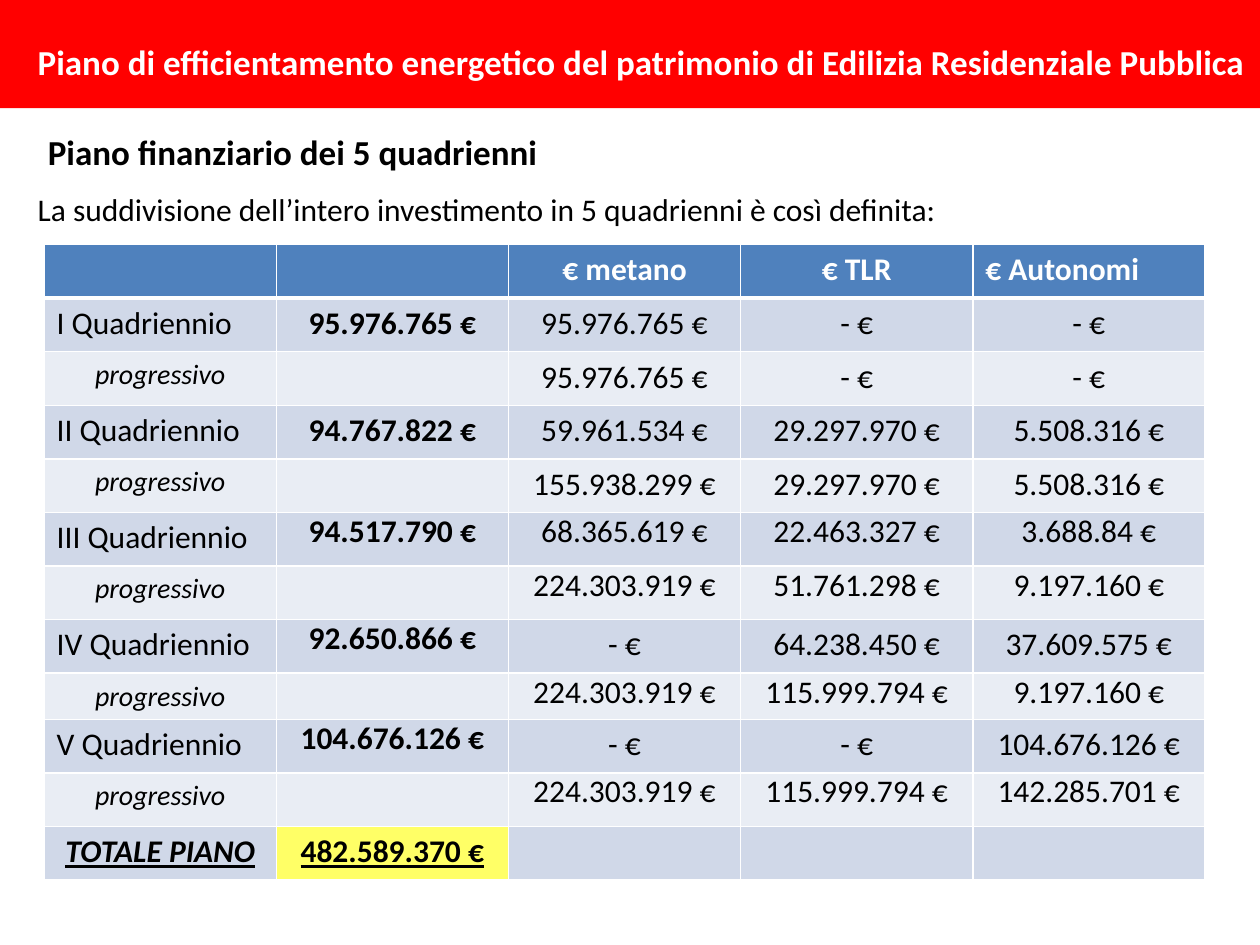
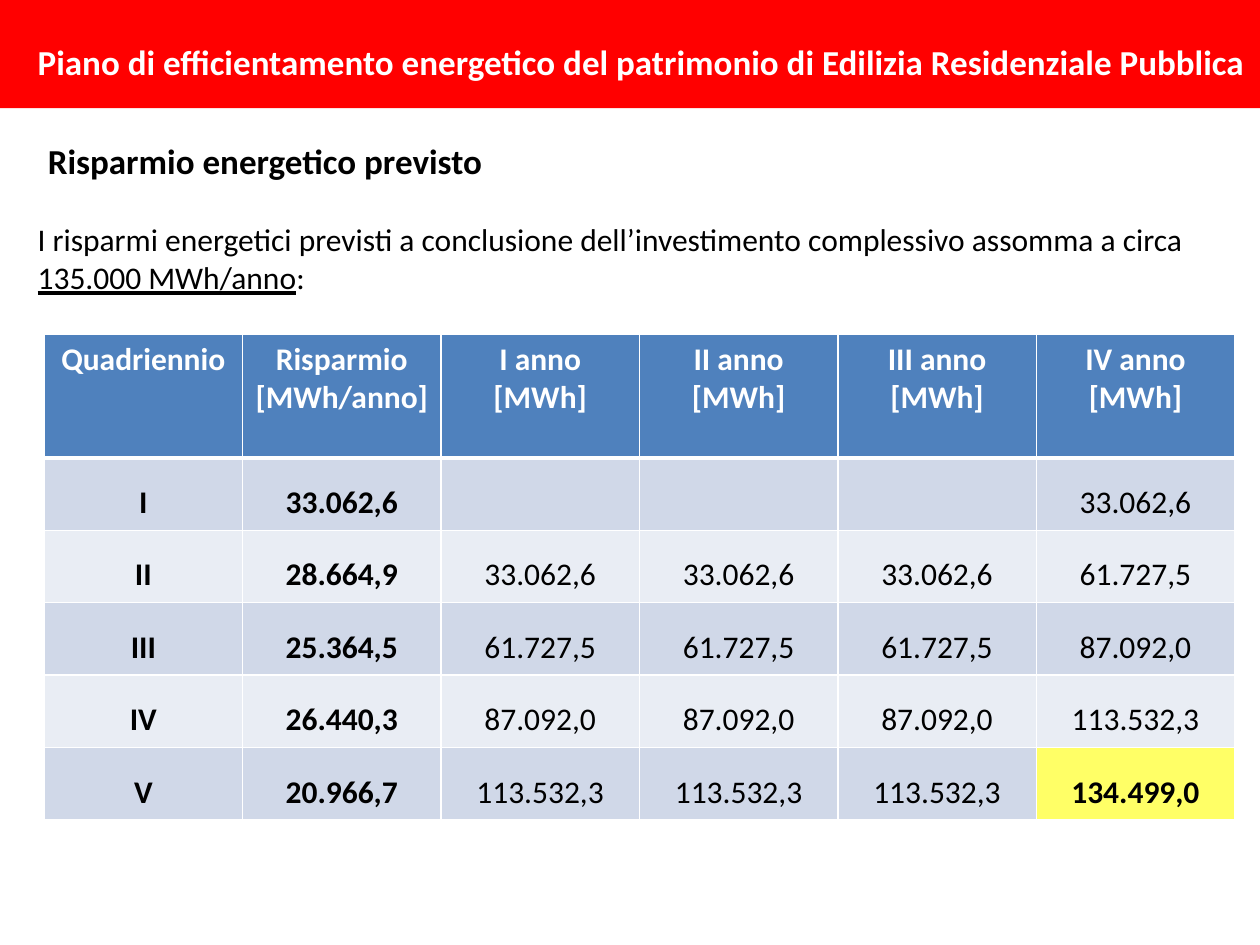
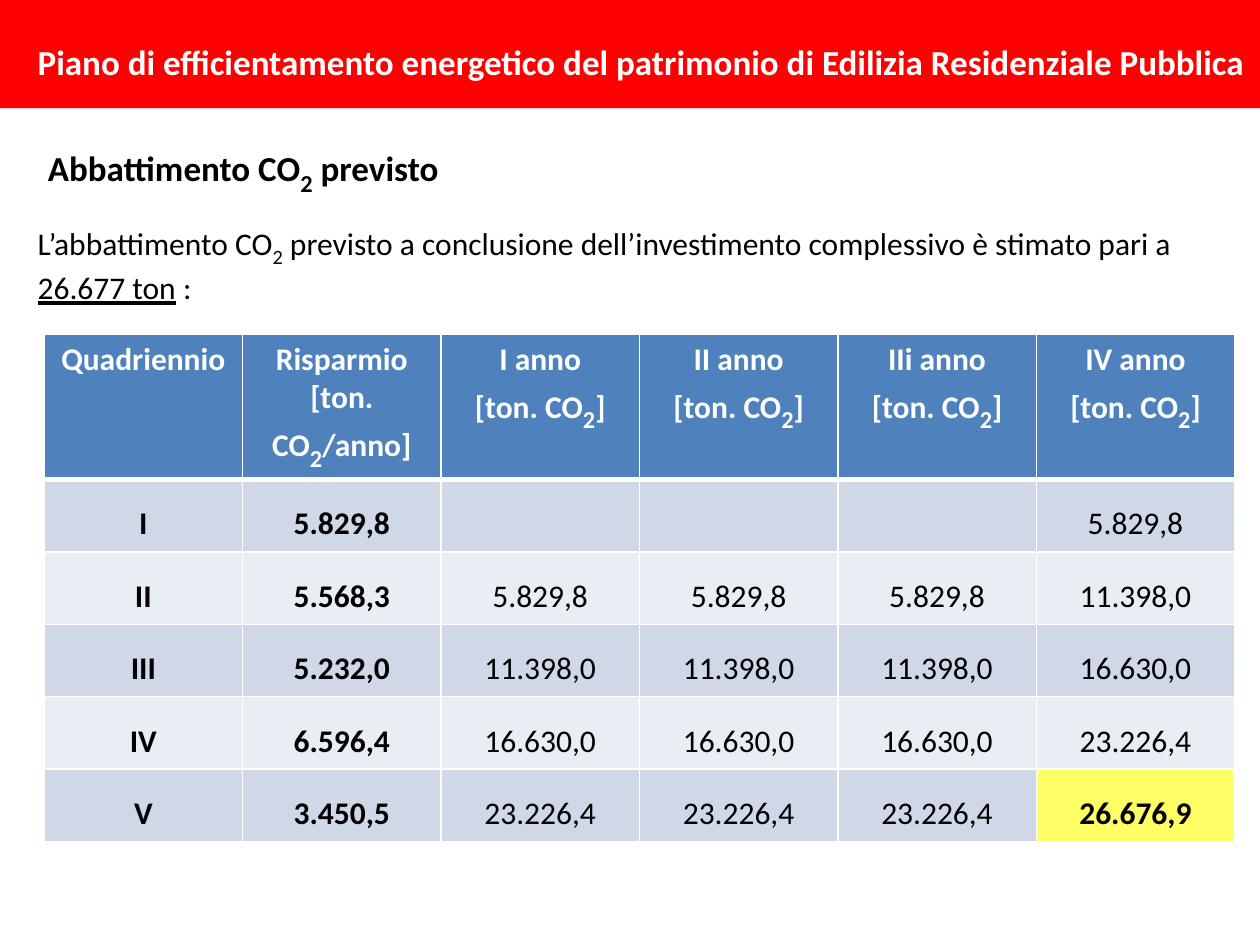
"""Build three slides on the energy plan for public housing."""
from dataclasses import dataclass
from typing import Callable

from lxml.etree import SubElement
from pptx import Presentation
from pptx.dml.color import RGBColor
from pptx.enum.shapes import MSO_SHAPE
from pptx.enum.text import MSO_ANCHOR, MSO_AUTO_SIZE, PP_ALIGN
from pptx.oxml.ns import qn
from pptx.util import Cm, Pt

HUES = {
    "band": "FF0000",
    "head": "4F81BD",
    "odd": "D0D8E8",
    "even": "E9EDF4",
    "mark": "FFFF66",
    "ink": "000000",
    "white": "FFFFFF",
}
FONT = "Calibri"
PLAN = "Piano di efficientamento energetico del patrimonio di Edilizia Residenziale Pubblica"
TERMS = ["I", "II", "III", "IV", "V"]
EDGES = ["L", "R", "T", "B"]


@dataclass
class Page:
    """Wording and table of one slide, with lengths in centimetres."""
    title: str
    title_top: float
    body: str
    body_top: float
    body_tall: float
    grid: list[list[str]]
    left: float
    top: float
    width: float
    tall: list[float]
    mark: tuple[int, int]
    style: Callable[[int, int], dict]


def tint(name: str) -> RGBColor:
    """Return a named colour."""
    return RGBColor.from_string(HUES[name])


def write(frame, text: str, *, size: float = 18, hue: str = "ink", bold: bool = False,
          italic: bool = False, under: bool = False, sub: float = 24,
          align=PP_ALIGN.LEFT, lead: float = 1) -> None:
    """Write one paragraph; | splits runs, ~ opens a subscript, _ an underline."""
    para = frame.paragraphs[0]
    para.alignment = align
    para.line_spacing = lead
    for row, line in enumerate(text.split("\n")):
        if row:
            para.add_line_break()
        for part in line.split("|"):
            low, lined = part.startswith("~"), part.startswith("_")
            run = para.add_run()
            run.text = part.lstrip("~_")
            font = run.font
            font.name, font.size = FONT, Pt(sub if low else size)
            font.bold, font.italic, font.underline = bold, italic, under or lined
            font.color.rgb = tint(hue)
            if low:
                run._r.get_or_add_rPr().set("baseline", "-25000")


def add_band(slide) -> None:
    """Draw the red band with the name of the plan."""
    band = slide.shapes.add_shape(MSO_SHAPE.RECTANGLE, 0, 0, Cm(25.4), Cm(2.18))
    band.shadow.inherit = False
    band.fill.solid()
    band.fill.fore_color.rgb = tint("band")
    band.line.fill.background()
    frame = band.text_frame
    frame.word_wrap = True
    frame.vertical_anchor = MSO_ANCHOR.MIDDLE
    frame.margin_left, frame.margin_right = Cm(0.76), Cm(0.2)
    frame.margin_top, frame.margin_bottom = Cm(0.41), Cm(0.13)
    write(frame, PLAN, size=20, hue="white", bold=True)


def add_title(slide, text: str, top: float) -> None:
    """Place and fill the title."""
    title = slide.shapes.title
    title.left, title.top = Cm(0.71), Cm(top)
    title.width, title.height = Cm(23.6), Cm(1.11)
    frame = title.text_frame
    frame.auto_size = MSO_AUTO_SIZE.NONE
    frame.vertical_anchor = MSO_ANCHOR.TOP
    write(frame, text, size=20, bold=True)


def add_body(slide, text: str, top: float, tall: float) -> None:
    """Add the sentence above the table."""
    box = slide.shapes.add_textbox(Cm(0.51), Cm(top), Cm(24.5), Cm(tall))
    box.text_frame.word_wrap = True
    write(box.text_frame, text, sub=20)


def edge(cell, row: int) -> None:
    """Give a cell white borders, thicker under the head row."""
    props = cell._tc.get_or_add_tcPr()
    for side in EDGES:
        thick = (row, side) in [(0, "B"), (1, "T")]
        line = SubElement(props, qn(f"a:ln{side}"), w=str(Pt(3 if thick else 1)))
        fill = SubElement(line, qn("a:solidFill"))
        SubElement(fill, qn("a:srgbClr"), val=HUES["white"])


def add_grid(slide, page: Page) -> None:
    """Add the table of a page."""
    rows, cols = len(page.grid), len(page.grid[0])
    table = slide.shapes.add_table(rows, cols, Cm(page.left), Cm(page.top),
                                   Cm(page.width), Cm(sum(page.tall))).table
    for col in table.columns:
        col.width = Cm(page.width / cols)
    for row, line in enumerate(page.grid):
        table.rows[row].height = Cm(page.tall[row])
        for col, text in enumerate(line):
            cell = table.cell(row, col)
            edge(cell, row)
            name = "head" if row == 0 else "odd" if row % 2 else "even"
            cell.fill.solid()
            cell.fill.fore_color.rgb = tint("mark" if (row, col) == page.mark else name)
            look = {"align": PP_ALIGN.CENTER} | page.style(row, col)
            if look.pop("flush", False) or not text:
                cell.margin_left = cell.margin_right = 0
                cell.margin_top = cell.margin_bottom = 0
            if text:
                write(cell.text_frame, text, **look)


def cost_style(row: int, col: int) -> dict:
    """Return the format of a cell in the cost table."""
    if row == 0:
        return {"hue": "white", "bold": True,
                "align": PP_ALIGN.LEFT if col == 4 else PP_ALIGN.CENTER}
    if row == 11:
        return {"bold": True, "under": True, "italic": col == 0}
    if col == 0:
        return {"align": PP_ALIGN.LEFT} if row % 2 else {"size": 16, "italic": True}
    flush = row >= 5 and (col == 1 or row not in (7, 9))
    return {"bold": col == 1, "flush": flush}


def gain_style(row: int, col: int) -> dict:
    """Return the format of a cell in a savings table."""
    if row == 0:
        return {"hue": "white", "bold": True}
    return {"bold": col < 2 or (row, col) == (5, 5), "lead": 1.5}


def cost_grid() -> list[list[str]]:
    """Return the rows of the cost table."""
    none = "-"
    costs = [
        ("95.976.765", ["95.976.765", none, none], ["95.976.765", none, none]),
        ("94.767.822", ["59.961.534", "29.297.970", "5.508.316"],
         ["155.938.299", "29.297.970", "5.508.316"]),
        ("94.517.790", ["68.365.619", "22.463.327", "3.688.84"],
         ["224.303.919", "51.761.298", "9.197.160"]),
        ("92.650.866", [none, "64.238.450", "37.609.575"],
         ["224.303.919", "115.999.794", "9.197.160"]),
        ("104.676.126", [none, none, "104.676.126"],
         ["224.303.919", "115.999.794", "142.285.701"]),
    ]
    grid = [["", "", "€ metano", "€ TLR", "€ Autonomi"]]
    for term, (total, parts, sums) in zip(TERMS, costs):
        grid.append([f"{term} Quadriennio"] + [f"{sum_} €" for sum_ in [total, *parts]])
        grid.append(["progressivo", ""] + [f"{sum_} €" for sum_ in sums])
    return grid + [["TOTALE PIANO", "482.589.370 €", "", "", ""]]


def gain_grid(unit: str, rate: str, years: list[str], gains: list[str],
              sums: list[str]) -> list[list[str]]:
    """Return the rows of a savings table, where three years repeat the last sum."""
    heads = ["Quadriennio", f"Risparmio [{rate}]"]
    grid = [heads + [f"{year} anno\n[{unit}]" for year in years]]
    for term, gain, past, now in zip(TERMS, gains, ["", *sums], sums):
        grid.append([term, gain, past, past, past, now])
    return grid


def gain_page(title: str, body: str, head: float, grid: list[list[str]]) -> Page:
    """Return a page with a savings table."""
    return Page(title, 2.69, body, 4.32, 1.8, grid, 0.89, 6.73, 24,
                [head] + [1.46] * 5, (5, 5), gain_style)


def main() -> None:
    """Build and save the slides."""
    pages = [
        Page("Piano finanziario dei 5 quadrienni", 2.51,
             "La suddivisione dell’intero investimento in 5 quadrienni è così definita:",
             3.71, 1.02, cost_grid(), 0.89, 4.93, 23.4,
             [1.08] * 8 + [0.93] + [1.08] * 3, (11, 1), cost_style),
        gain_page(
            "Risparmio energetico previsto",
            "I risparmi energetici previsti a conclusione dell’investimento complessivo "
            "assomma a circa |_135.000 MWh/anno|:", 2.5,
            gain_grid("MWh", "MWh/anno", ["I", "II", "III", "IV"],
                      ["33.062,6", "28.664,9", "25.364,5", "26.440,3", "20.966,7"],
                      ["33.062,6", "61.727,5", "87.092,0", "113.532,3", "134.499,0"])),
        gain_page(
            "Abbattimento CO|~2| previsto",
            "L’abbattimento CO|~2| previsto a conclusione dell’investimento complessivo "
            "è stimato pari a |_26.677 ton| :", 2.92,
            gain_grid("ton. CO|~2|", "ton. CO|~2|/anno", ["I", "II", "IIi", "IV"],
                      ["5.829,8", "5.568,3", "5.232,0", "6.596,4", "3.450,5"],
                      ["5.829,8", "11.398,0", "16.630,0", "23.226,4", "26.676,9"])),
    ]
    deck = Presentation()
    deck.slide_width, deck.slide_height = Cm(25.4), Cm(19.05)
    for page in pages:
        slide = deck.slides.add_slide(deck.slide_layouts[5])
        add_body(slide, page.body, page.body_top, page.body_tall)
        add_grid(slide, page)
        add_band(slide)
        add_title(slide, page.title, page.title_top)
    deck.save("out.pptx")


if __name__ == "__main__":
    main()
